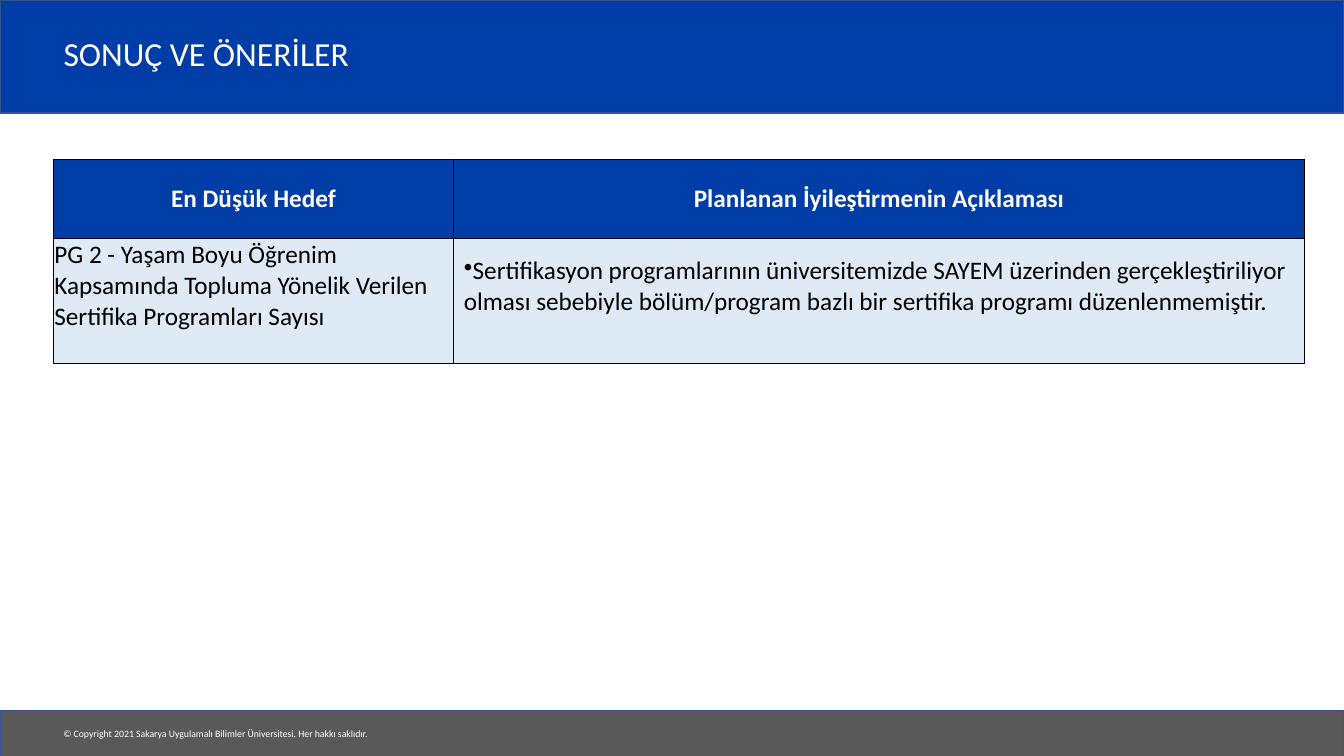
from pptx import Presentation
from pptx.dml.color import RGBColor
from pptx.enum.shapes import MSO_SHAPE
from pptx.enum.text import MSO_ANCHOR, MSO_AUTO_SIZE, PP_ALIGN
from pptx.oxml import parse_xml
from pptx.oxml.ns import nsdecls
from pptx.util import Inches, Pt

BLUE = RGBColor(0x00, 0x3D, 0xA6)
EDGE = RGBColor(0x32, 0x54, 0x91)
GRAY = RGBColor(0x59, 0x59, 0x59)
PALE = RGBColor(0xDE, 0xEB, 0xF7)
WHITE = RGBColor(0xFF, 0xFF, 0xFF)
BLACK = RGBColor(0x00, 0x00, 0x00)
WIDE = 13.33


class Deck:
    """Holds the text style and the current slide, and adds elements to it."""

    base = {"name": "Calibri", "size": Pt(18), "bold": False}

    def __init__(self):
        self.prs = Presentation()
        self.prs.slide_width = Inches(WIDE)
        self.prs.slide_height = Inches(7.5)
        self.slide = self.prs.slides.add_slide(self.prs.slide_layouts[5])

    def text(self, frame, words, color, align=PP_ALIGN.LEFT, bullet=None, **style):
        para = frame.paragraphs[0]
        para.alignment = align
        if bullet:
            props = para._p.get_or_add_pPr()
            props.set("marL", "0")
            props.set("indent", "0")
            props.append(parse_xml(f'<a:buChar {nsdecls("a")} char="{bullet}"/>'))
        run = para.add_run()
        run.text = words
        for key, value in {**self.base, **style}.items():
            setattr(run.font, key, value)
        run.font.color.rgb = color
        return para

    def band(self, top, height, color):
        box = self.slide.shapes.add_shape(
            MSO_SHAPE.RECTANGLE, 0, Inches(top), Inches(WIDE), Inches(height))
        box.shadow.inherit = False
        box.fill.solid()
        box.fill.fore_color.rgb = color
        box.line.color.rgb = EDGE
        box.line.width = Pt(1)

    def title(self, words, *place):
        shape = self.slide.shapes.title
        shape.left, shape.top, shape.width, shape.height = map(Inches, place)
        frame = shape.text_frame
        frame.auto_size = MSO_AUTO_SIZE.NONE
        frame.vertical_anchor = MSO_ANCHOR.MIDDLE
        self.text(frame, words, WHITE, size=Pt(24)).line_spacing = 0.9
        self.slide.shapes._spTree.append(shape._element)

    def label(self, words, *place):
        frame = self.slide.shapes.add_textbox(*map(Inches, place)).text_frame
        frame.word_wrap = False
        frame.auto_size = MSO_AUTO_SIZE.SHAPE_TO_FIT_TEXT
        self.text(frame, words, WHITE, size=Pt(7))

    def cell(self, cell, words, fill, color, pads, anchor=MSO_ANCHOR.MIDDLE, **style):
        for side in "LRTB":
            cell._tc.get_or_add_tcPr().append(parse_xml(
                f'<a:ln{side} {nsdecls("a")} w="{int(Pt(1))}"><a:solidFill>'
                f'<a:srgbClr val="{BLACK}"/></a:solidFill></a:ln{side}>'))
        cell.fill.solid()
        cell.fill.fore_color.rgb = fill
        cell.vertical_anchor = anchor
        for side, pad in zip(("left", "top", "right", "bottom"), pads):
            setattr(cell, f"margin_{side}", Inches(pad))
        self.text(cell.text_frame, words, color, **style)

    def table(self, left, top, cols, rows, cells):
        grid = self.slide.shapes.add_table(
            len(rows), len(cols), Inches(left), Inches(top),
            Inches(sum(cols)), Inches(sum(rows))).table
        for col, width in zip(grid.columns, cols):
            col.width = Inches(width)
        for row, height, line in zip(grid.rows, rows, cells):
            row.height = Inches(height)
            for cell, form in zip(row.cells, line):
                self.cell(cell, **form)


def main():
    deck = Deck()
    deck.band(0, 1.12, BLUE)
    deck.band(7.05, 0.46, GRAY)
    deck.label("© Copyright 2021 Sakarya Uygulamalı Bilimler Üniversitesi. "
               "Her hakkı saklıdır.", 0.53, 7.17, 3.29, 0.22)
    deck.title("SONUÇ VE ÖNERİLER", 0.53, 0.19, 11.03, 0.73)
    head = {"fill": BLUE, "color": WHITE, "bold": True,
            "align": PP_ALIGN.CENTER, "pads": (0.07, 0, 0.07, 0)}
    body = {"fill": PALE, "color": BLACK}
    deck.table(0.53, 1.58, (3.97, 8.44), (0.79, 1.24), [
        [{**head, "words": "En Düşük Hedef"},
         {**head, "words": "Planlanan İyileştirmenin Açıklaması"}],
        [{**body, "pads": (0.01, 0.01, 0.01, 0), "anchor": MSO_ANCHOR.TOP,
          "words": "PG 2 - Yaşam Boyu Öğrenim Kapsamında Topluma Yönelik "
                   "Verilen Sertifika Programları Sayısı"},
         {**body, "pads": (0.1, 0.05, 0.1, 0.35), "bullet": "•",
          "words": "Sertifikasyon programlarının üniversitemizde SAYEM üzerinden "
                   "gerçekleştiriliyor olması sebebiyle bölüm/program bazlı bir "
                   "sertifika programı düzenlenmemiştir."}],
    ])
    deck.prs.save("out.pptx")


if __name__ == "__main__":
    main()
